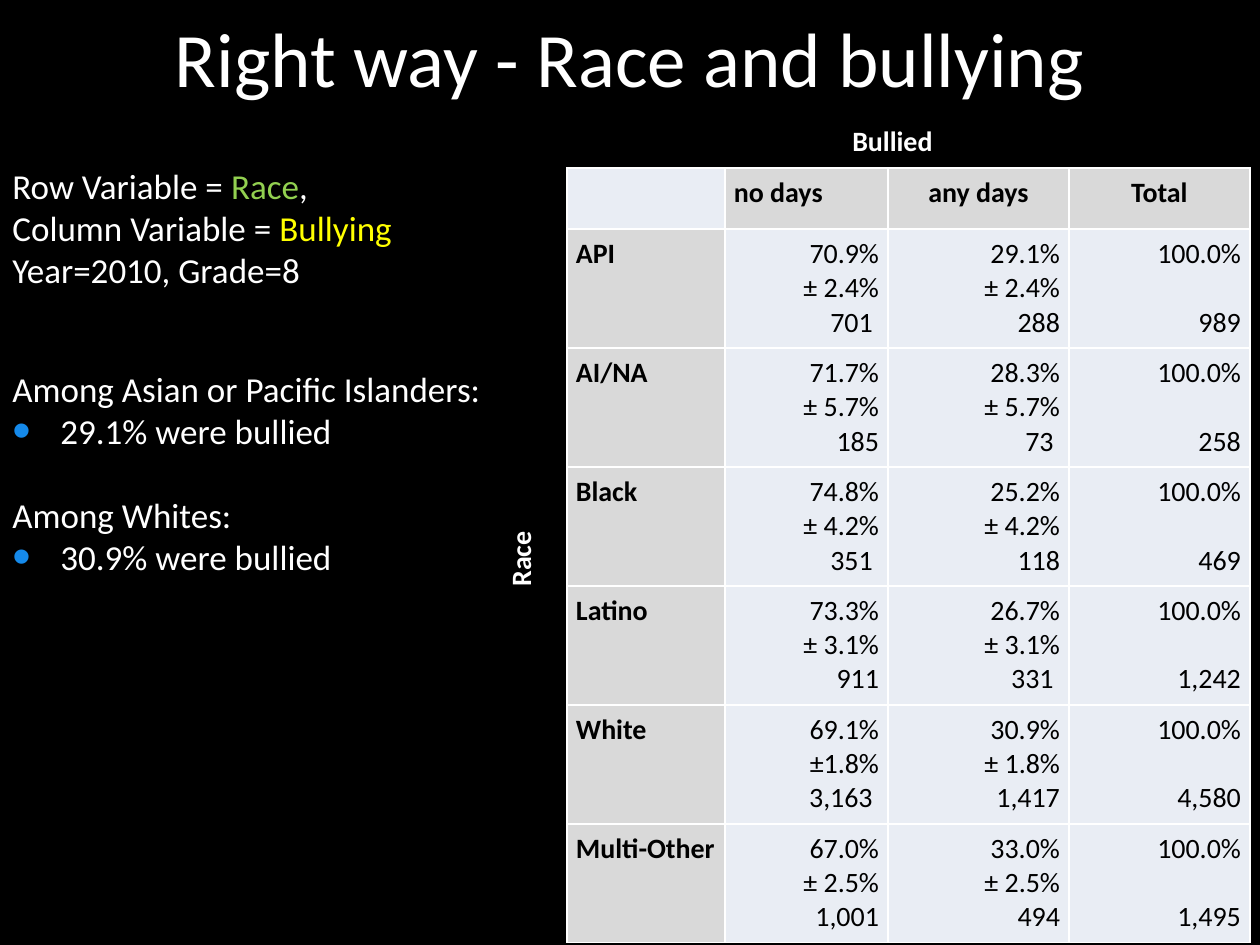
from lxml import etree
from pptx import Presentation
from pptx.dml.color import RGBColor
from pptx.enum.text import MSO_ANCHOR, PP_ALIGN
from pptx.oxml.ns import qn
from pptx.util import Emu, Pt

PX = 914400 // 126
LEFT, CENTER, RIGHT = PP_ALIGN.LEFT, PP_ALIGN.CENTER, PP_ALIGN.RIGHT
TOP = MSO_ANCHOR.TOP
FONT = "Calibri"
WHITE, BLACK, GREEN, YELLOW = "FFFFFF", "000000", "92D050", "FFFF00"
BULLET_BLUE, LABEL_GREY, VALUE_BLUE = "158AEB", "D9D9D9", "E9EDF4"

COLUMN_WIDTHS = [158, 163, 181, 181]
HEADER_HEIGHT, ROW_HEIGHT = 61, 119
HEADINGS = [("no days", LEFT), ("any days", CENTER), ("Total", CENTER)]
RACES = [
    ("API", "70.9%\v± 2.4%\v701 ", "29.1%\v± 2.4%\v288", "100.0%\v\v989"),
    ("AI/NA", "71.7%\v± 5.7%\v185", "28.3%\v± 5.7%\v73 ", "100.0%\v\v258"),
    ("Black", "74.8%\v± 4.2%\v351 ", "25.2%\v± 4.2%\v118", "100.0%\v\v469"),
    ("Latino", "73.3%\v± 3.1%\v911", "26.7%\v± 3.1%\v331 ", "100.0%\v\v1,242"),
    ("White", "69.1%\v±1.8%\v3,163 ", "30.9%\v± 1.8%\v1,417", "100.0%\v\v4,580"),
    ("Multi-Other", "67.0%\v± 2.5%\v1,001", "33.0%\v± 2.5%\v494", "100.0%\v\v1,495"),
]
NOTES = [
    ([("Row Variable = ", None), ("Race", GREEN), (",", None)], 0, False),
    ([("Column Variable = ", None), ("Bullying", YELLOW)], 0, False),
    ([("Year=2010, Grade=8", None)], 0, False),
    ([("Among Asian or Pacific Islanders:", None)], 44, False),
    ([("29.1% were bullied", None)], 0, True),
    ([("Among Whites:", None)], 24, False),
    ([("30.9% were bullied", None)], 0, True),
]


def px(length):
    """Turn a length in px into EMU."""
    return Emu(length * PX)


def color(hex_value):
    """Turn a hex string into a colour."""
    return RGBColor.from_string(hex_value)


def style(paragraph, size, hex_value, bold=False, align=LEFT):
    """Set the font and alignment of a paragraph."""
    paragraph.alignment = align
    font = paragraph.font
    font.name, font.size, font.bold = FONT, Pt(size), bold
    font.color.rgb = color(hex_value)


def add_frame(slide, box):
    """Add a wrapping, top-anchored text box and return its shape."""
    shape = slide.shapes.add_textbox(*map(px, box))
    shape.text_frame.word_wrap = True
    shape.text_frame.vertical_anchor = TOP
    return shape


def add_label(slide, box, text, size, bold=False, align=LEFT, rotation=0):
    """Add a single line of white text."""
    label = add_frame(slide, box)
    label.rotation = rotation
    line = label.text_frame.paragraphs[0]
    line.text = text
    style(line, size, WHITE, bold, align)
    return label


def add_bullet(paragraph):
    """Give a paragraph a hanging blue bullet."""
    properties = paragraph._p.get_or_add_pPr()
    properties.set("marL", str(px(48)))
    properties.set("indent", str(px(-48)))
    bullet_color = etree.SubElement(properties, qn("a:buClr"))
    etree.SubElement(bullet_color, qn("a:srgbClr"), val=BULLET_BLUE)
    etree.SubElement(properties, qn("a:buSzPct"), val="150000")
    etree.SubElement(properties, qn("a:buFont"), typeface="Arial")
    etree.SubElement(properties, qn("a:buChar"), char="•")


def add_notes(slide, box):
    """Write the variables and findings in the given box."""
    frame = add_frame(slide, box).text_frame
    for index, (pieces, gap, bulleted) in enumerate(NOTES):
        line = frame.add_paragraph() if index else frame.paragraphs[0]
        if bulleted:
            add_bullet(line)
        style(line, 20, WHITE)
        line.space_before = Pt(gap)
        for text, highlight in pieces:
            run = line.add_run()
            run.text = text
            if highlight:
                run.font.color.rgb = color(highlight)


def add_borders(cell):
    """Draw a white line on all four sides of a cell."""
    properties = cell._tc.get_or_add_tcPr()
    for index, side in enumerate(("lnL", "lnR", "lnT", "lnB")):
        border = etree.Element(qn(f"a:{side}"), w=str(Pt(1)))
        fill = etree.SubElement(border, qn("a:solidFill"))
        etree.SubElement(fill, qn("a:srgbClr"), val=WHITE)
        properties.insert(index, border)


def fill_cell(cell, text, fill, bold, align):
    """Write and format one table cell."""
    cell.margin_left = cell.margin_right = px(9)
    cell.margin_top = cell.margin_bottom = px(8)
    cell.vertical_anchor = TOP
    cell.fill.solid()
    cell.fill.fore_color.rgb = color(fill)
    add_borders(cell)
    content = cell.text_frame.paragraphs[0]
    content.text = text
    style(content, 16, BLACK, bold, align)


def add_crosstab(slide, left, top):
    """Build the race by bullying table with its two axis labels."""
    width = sum(COLUMN_WIDTHS)
    height = HEADER_HEIGHT + ROW_HEIGHT * len(RACES)
    table = slide.shapes.add_table(
        len(RACES) + 1, len(COLUMN_WIDTHS),
        px(left), px(top), px(width), px(height)).table
    table.first_row = table.horz_banding = False
    for column, column_width in zip(table.columns, COLUMN_WIDTHS):
        column.width = px(column_width)
    for index, row in enumerate(table.rows):
        row.height = px(ROW_HEIGHT if index else HEADER_HEIGHT)

    fill_cell(table.cell(0, 0), "", VALUE_BLUE, True, LEFT)
    for column, (heading, align) in enumerate(HEADINGS, 1):
        fill_cell(table.cell(0, column), heading, LABEL_GREY, True, align)
    for row, (race, *values) in enumerate(RACES, 1):
        fill_cell(table.cell(row, 0), race, LABEL_GREY, True, LEFT)
        for column, value in enumerate(values, 1):
            fill_cell(table.cell(row, column), value, VALUE_BLUE, False, RIGHT)

    add_label(slide, (left - 166, top + 254, 273, 81), "Race", 16, True, rotation=270)
    add_label(slide, (left + 273, top - 51, 273, 81), "Bullied", 16, True)


def main():
    """Build and save the slide."""
    presentation = Presentation()
    presentation.slide_width, presentation.slide_height = px(1260), px(945)
    slide = presentation.slides.add_slide(presentation.slide_layouts[6])
    slide.background.fill.solid()
    slide.background.fill.fore_color.rgb = color(BLACK)
    title = add_label(slide, (63, 0, 1134, 158), "Right way - Race and bullying", 44, align=CENTER)
    title.text_frame.margin_top = px(10)
    add_notes(slide, (0, 158, 519, 428))
    add_crosstab(slide, 567, 168)
    presentation.save("out.pptx")


if __name__ == "__main__":
    main()
